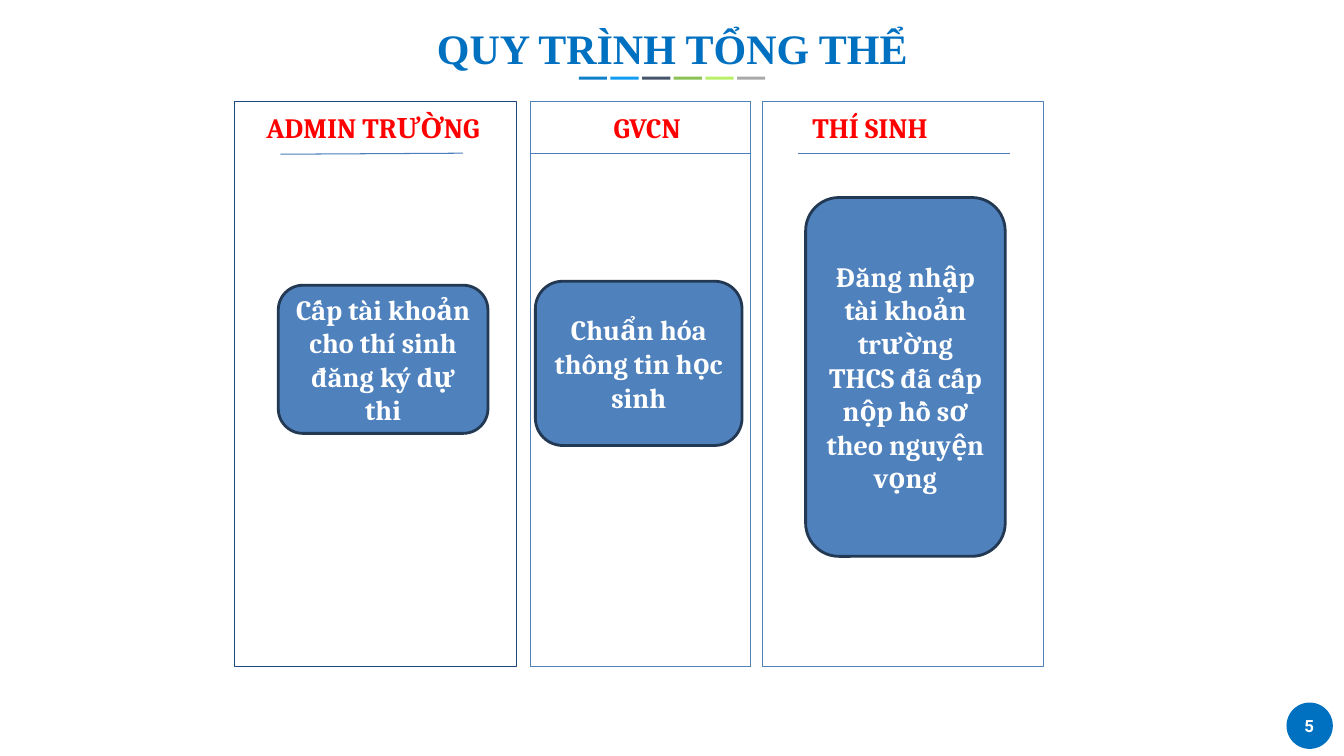
from lxml.etree import SubElement
from pptx import Presentation
from pptx.dml.color import RGBColor
from pptx.enum.shapes import MSO_CONNECTOR, MSO_SHAPE
from pptx.enum.text import MSO_ANCHOR, PP_ALIGN
from pptx.oxml.ns import qn
from pptx.util import Inches, Pt


def color(value):
    return RGBColor.from_string(value)


class SlideBuilder:
    """Draws styled elements on the current slide."""

    blue, white, red = "0070C0", "FFFFFF", "FF0000"
    panel_fill, panel_line, rule_line = "4F81BD", "233953", "4B7EBC"
    body_font = "Cambria"

    def __init__(self, page):
        self.page = page

    def add_text(self, shape, text, size, font, ink, insets, anchor=MSO_ANCHOR.MIDDLE, spacing=None):
        frame = shape.text_frame
        frame.word_wrap = True
        frame.vertical_anchor = anchor
        side, end = insets
        frame.margin_left = frame.margin_right = Inches(side)
        frame.margin_top = frame.margin_bottom = Inches(end)
        para = frame.paragraphs[0]
        para.alignment = PP_ALIGN.CENTER
        para.line_spacing = spacing
        span = para.add_run()
        span.text = text
        span.font.name, span.font.size, span.font.bold = font, Pt(size), True
        span.font.color.rgb = color(ink)

    def label(self, place, *style, **options):
        box = self.page.shapes.add_textbox(*map(Inches, place))
        self.add_text(box, *style, **options)

    def shape(self, kind, place, fill=None, line=None, weight=0.75):
        shape = self.page.shapes.add_shape(kind, *map(Inches, place))
        shape.shadow.inherit = False
        if fill:
            shape.fill.solid()
            shape.fill.fore_color.rgb = color(fill)
        else:
            shape.fill.background()
        if line:
            shape.line.color.rgb = color(line)
            shape.line.width = Pt(weight)
        else:
            shape.line.fill.background()
        return shape

    def rule(self, *ends):
        line = self.page.shapes.add_connector(MSO_CONNECTOR.STRAIGHT, *map(Inches, ends))
        line.line.color.rgb = color(self.rule_line)
        line.line.width = Pt(0.75)
        SubElement(line._element.spPr, qn("a:effectLst"))

    def step(self, place, text):
        box = self.shape(MSO_SHAPE.ROUNDED_RECTANGLE, place, self.panel_fill, self.panel_line, 2)
        self.add_text(box, text, 20, self.body_font, self.white, (0.1, 0.05))

    def lane(self, left, width, line, heading_left, heading, rule):
        self.shape(MSO_SHAPE.RECTANGLE, (left, 1.01, width, 5.6), line=line)
        self.label((heading_left, 1.07, 2.58, 0.38), heading, 20, self.body_font, self.red, (0.05, 0.03))
        self.rule(*rule)

    def page_number(self, number):
        self.shape(MSO_SHAPE.OVAL, (12.76, 6.97, 0.46, 0.46), self.blue)
        self.label((12.56, 7, 0.85, 0.4), number, 12, "Roboto", self.white, (0.2, 0.1),
                   anchor=MSO_ANCHOR.TOP)

    def title(self, text):
        for index, fill in enumerate(("0E80C9", "119CF4", "445469", "8AC153", "BAEF69", "A9A8AB")):
            self.shape(MSO_SHAPE.RECTANGLE, (5.74 + index * 1.57 / 5, 0.76, 0.28, 0.03), fill)
        self.label((0.92, 0.27, 11.5, 0.47), text, 30, "Times New Roman", self.blue, (0.1, 0.05),
                   spacing=0.9)


def main():
    deck = Presentation()
    deck.slide_width, deck.slide_height = Inches(13.33), Inches(7.5)
    builder = SlideBuilder(deck.slides.add_slide(deck.slide_layouts[6]))
    builder.page_number("5")
    builder.title("QUY TRÌNH TỔNG THỂ")
    lanes = (
        (2.33, 2.79, "1F497D", 2.41, "ADMIN TRƯỜNG", (2.78, 1.53, 4.59, 1.52)),
        (5.26, 2.18, "4F81BD", 5.13, "GVCN", (5.27, 1.52, 7.45, 1.52)),
        (7.56, 2.79, "4F81BD", 7.34, "THÍ SINH", (7.91, 1.52, 10.02, 1.52)),
    )
    for lane in lanes:
        builder.lane(*lane)
    steps = (
        ((2.76, 2.83, 2.08, 1.47), "Cấp tài khoản cho thí sinh đăng ký dự thi"),
        ((5.31, 2.79, 2.05, 1.63), "Chuẩn hóa thông tin học sinh"),
        ((7.99, 1.96, 1.98, 3.56), "Đăng nhập tài khoản trường THCS đã cấp nộp hồ sơ theo nguyện vọng"),
    )
    for place, text in steps:
        builder.step(place, text)
    deck.save("out.pptx")


if __name__ == "__main__":
    main()
